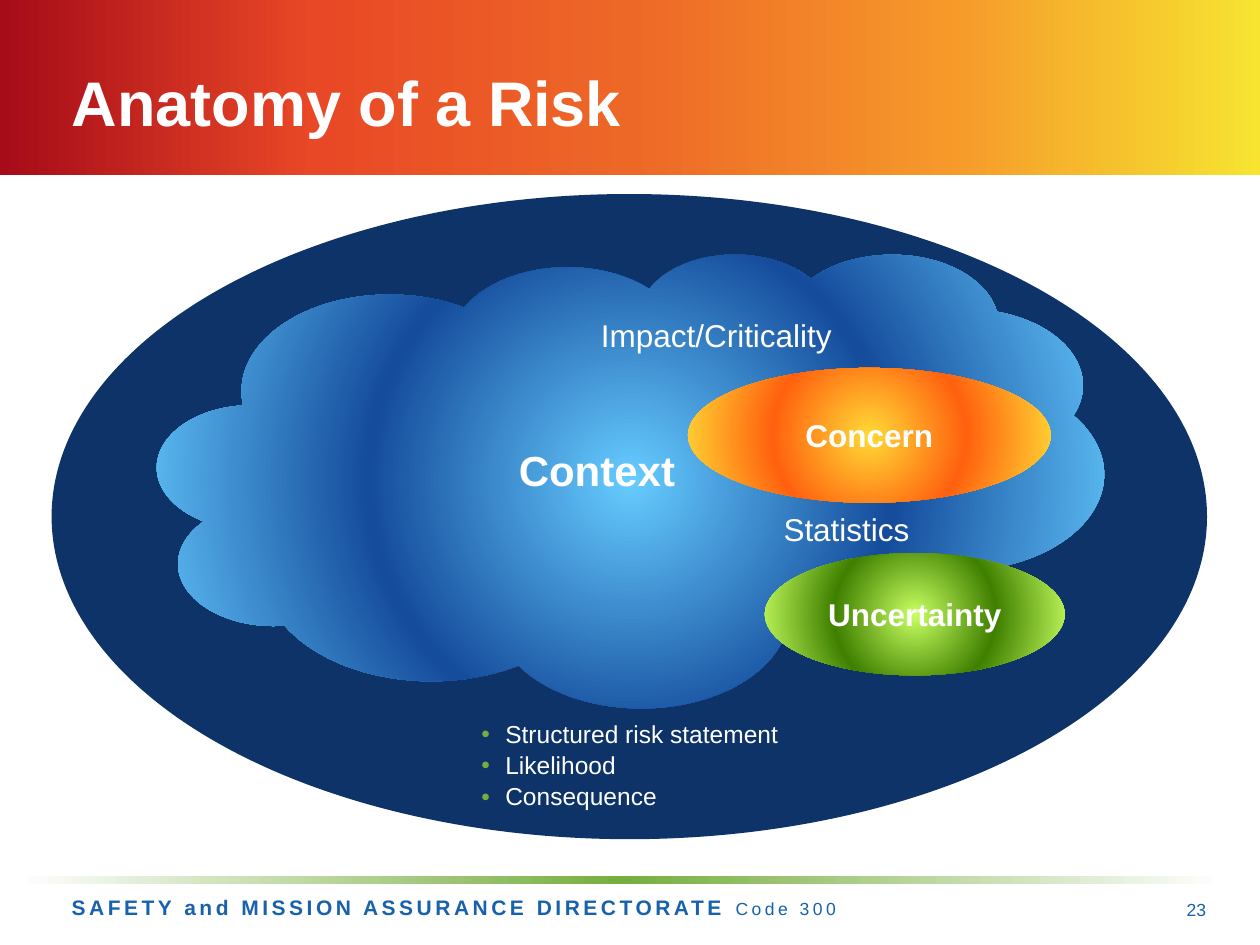
from dataclasses import dataclass

from lxml.etree import SubElement
from pptx import Presentation
from pptx.dml.color import RGBColor
from pptx.enum.shapes import MSO_SHAPE as Preset
from pptx.enum.text import MSO_ANCHOR as Anchor, MSO_AUTO_SIZE as AutoSize, PP_ALIGN as Align
from pptx.oxml.ns import qn
from pptx.util import Inches, Pt

COLORS = {
    "white": "FFFFFF", "navy": "0D3369", "blue": "1861AC", "green": "77AD3F",
    "crimson": "A60B19", "red": "E94826", "orange": "ED6827", "amber": "F6982A", "yellow": "F6E431",
    "sky": "66CCFF", "deep blue": "154C9C", "gold": "FFDA36", "flame": "FF610E",
    "lime": "C8FF62", "leaf": "408000",
}
FONT = "Arial"
COLUMNS, ROWS = 100, 75
CELL = Inches(0.1)


@dataclass
class Box:
    left: float
    top: float
    width: float
    height: float

    def area(self, column, row, columns, rows):
        return Box(self.left + column, self.top + row, columns, rows)

    def lengths(self):
        return [round(cells * CELL) for cells in (self.left, self.top, self.width, self.height)]


def fill_gradient(shape, stops, radial=False):
    shape.fill.background()
    properties = shape.element.spPr
    gradient = properties.makeelement(qn("a:gradFill"), {"rotWithShape": "1"})
    stop_list = SubElement(gradient, qn("a:gsLst"))
    for position, color in stops:
        stop = SubElement(stop_list, qn("a:gs"), pos=str(position * 1000))
        SubElement(stop, qn("a:srgbClr"), val=COLORS[color])
    if radial:
        circle = SubElement(gradient, qn("a:path"), {"path": "circle"})
        SubElement(circle, qn("a:fillToRect"), dict.fromkeys("ltrb", "50000"))
    else:
        SubElement(gradient, qn("a:lin"), ang="0", scaled="0")
    properties.replace(properties.find(qn("a:noFill")), gradient)


def format_run(run, size, color="white", bold=False):
    run.font.name = FONT
    run.font.size = Pt(size)
    run.font.bold = bold
    run.font.color.rgb = RGBColor.from_string(COLORS[color])


def write_text(shape, text, size, color="white", bold=False, align=Align.LEFT, anchor=Anchor.MIDDLE):
    frame = shape.text_frame
    frame.text = text
    frame.vertical_anchor = anchor
    for paragraph in frame.paragraphs:
        paragraph.alignment = align
        for run in paragraph.runs:
            format_run(run, size, color, bold)


def add_preset(slide, preset, box):
    shape = slide.shapes.add_shape(preset, *box.lengths())
    shape.shadow.inherit = False
    shape.line.fill.background()
    return shape


def add_glow(slide, preset, box, text, size, edge, ring):
    shape = add_preset(slide, preset, box)
    fill_gradient(shape, [(0, edge), (50, ring), (100, edge)], radial=True)
    write_text(shape, text, size, bold=True, align=Align.CENTER)


def add_label(slide, box, text):
    label = slide.shapes.add_textbox(*box.lengths())
    write_text(label, text, 18, anchor=Anchor.TOP)
    label.text_frame.word_wrap = False


def place_placeholder(placeholder, box):
    placeholder.left, placeholder.top, placeholder.width, placeholder.height = box.lengths()
    placeholder.element.getparent().append(placeholder.element)
    placeholder.text_frame.word_wrap = True
    placeholder.text_frame.auto_size = AutoSize.NONE


def build_header(slide, box):
    band = add_preset(slide, Preset.RECTANGLE, box)
    fill_gradient(band, [(0, "crimson"), (25, "red"), (50, "orange"), (75, "amber"), (100, "yellow")])
    title = slide.shapes.title
    place_placeholder(title, box.area(4.7, 1.8, 90, 12.5))
    write_text(title, "Anatomy of a Risk", 36, bold=True)


def build_statement_list(slide, box):
    body = slide.placeholders[1]
    place_placeholder(body, box)
    write_text(body, "Structured risk statement\nLikelihood\nConsequence", 14, anchor=Anchor.TOP)
    for paragraph in body.text_frame.paragraphs:
        paragraph.line_spacing = 0.9
        properties = paragraph._p.get_or_add_pPr()
        properties.set("marL", str(Inches(0.19)))
        properties.set("indent", str(-Inches(0.19)))
        bullet_color = SubElement(properties, qn("a:buClr"))
        SubElement(bullet_color, qn("a:srgbClr"), val=COLORS["green"])
        SubElement(properties, qn("a:buFont"), typeface=FONT)
        SubElement(properties, qn("a:buChar"), char="•")


def build_risk_diagram(slide, box):
    surround = add_preset(slide, Preset.OVAL, box)
    surround.fill.solid()
    surround.fill.fore_color.rgb = RGBColor.from_string(COLORS["navy"])
    add_glow(slide, Preset.CLOUD, box.area(8.4, 4.7, 75.1, 36), "Context", 24, "sky", "deep blue")
    build_statement_list(slide, box.area(33.1, 41.4, 25.6, 9.6))
    add_glow(slide, Preset.OVAL, box.area(50.5, 13.8, 28.8, 10.7), "Concern", 18, "gold", "flame")
    add_label(slide, box.area(57.1, 24.6, 12.1, 4), "Statistics")
    add_label(slide, box.area(42.6, 9.2, 20.5, 4), "Impact/Criticality")
    add_glow(slide, Preset.OVAL, box.area(56.6, 28.5, 23.8, 9.7), "Uncertainty", 18, "lime", "leaf")


def build_footer(slide, box):
    rule = add_preset(slide, Preset.RECTANGLE, box.area(1.2, 0, 96.1, 0.7))
    fill_gradient(rule, [(0, "white"), (50, "green"), (100, "white")])
    owner = slide.shapes.add_textbox(*box.area(4.7, 1, 82.5, 3).lengths())
    owner.text_frame.word_wrap = True
    paragraph = owner.text_frame.paragraphs[0]
    for text, size, bold in (("SAFETY and MISSION ASSURANCE DIRECTORATE ", 12, True), ("Code 300", 10, False)):
        run = paragraph.add_run()
        run.text = text
        format_run(run, size, "blue", bold)
        run._r.get_or_add_rPr().set("spc", "200")
    number = slide.shapes.add_textbox(*box.area(92.4, 0.7, 4.3, 4).lengths())
    number.text_frame.word_wrap = True
    write_text(number, "23", 10, "blue", align=Align.RIGHT)


def main():
    presentation = Presentation()
    presentation.slide_width = COLUMNS * CELL
    presentation.slide_height = ROWS * CELL
    slide = presentation.slides.add_slide(presentation.slide_layouts[1])
    build_header(slide, Box(0, 0, COLUMNS, 13.9))
    build_risk_diagram(slide, Box(4.1, 15.4, 91.7, 51.2))
    build_footer(slide, Box(0, 69.5, COLUMNS, 5.5))
    presentation.save("out.pptx")


if __name__ == "__main__":
    main()
